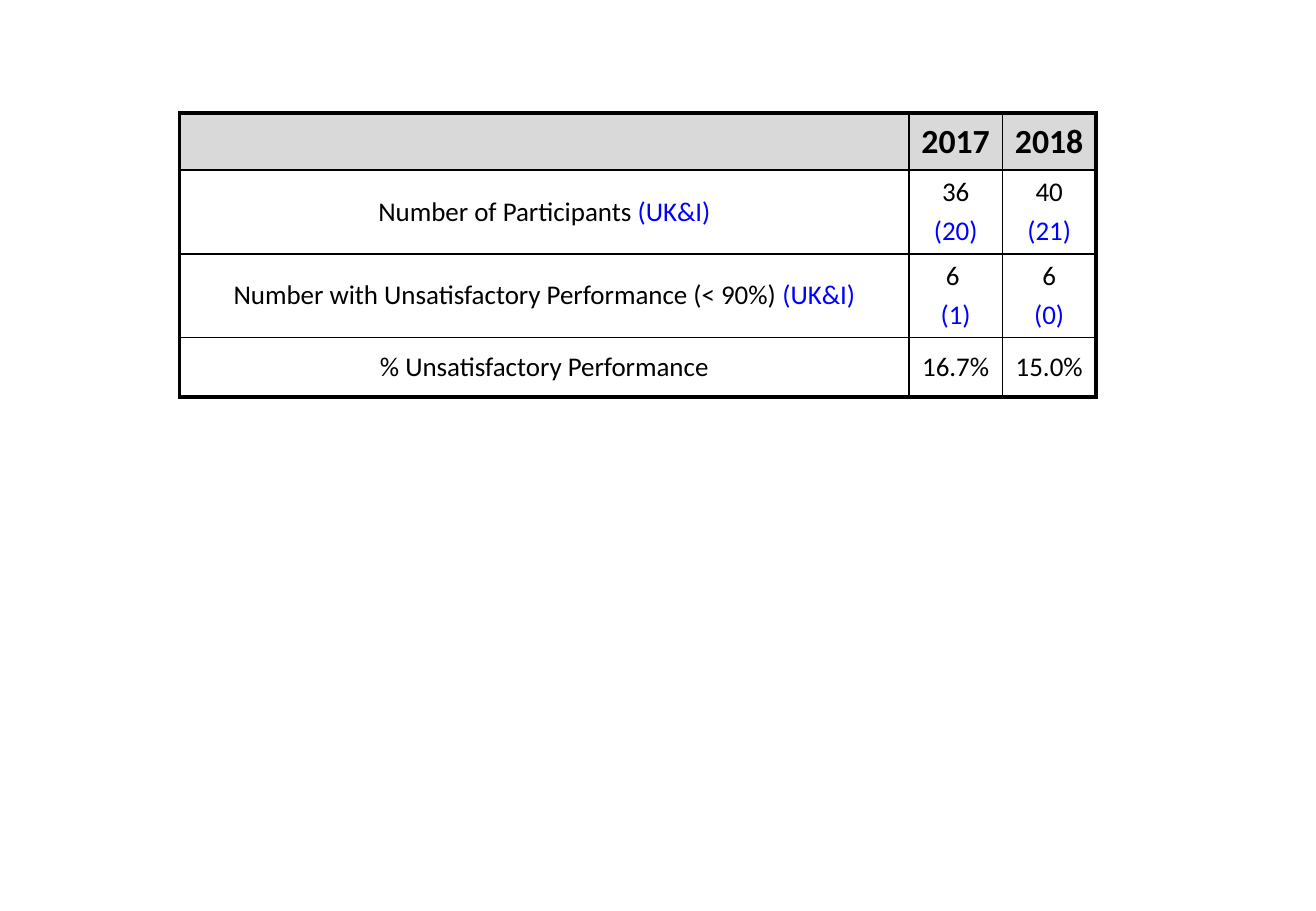
from lxml.etree import SubElement
from pptx import Presentation
from pptx.dml.color import RGBColor
from pptx.enum.text import MSO_ANCHOR, PP_ALIGN
from pptx.oxml.ns import qn
from pptx.util import Inches, Pt

BLACK, BLUE, GREY, WHITE = "000000", "0000FF", "D9D9D9", "FFFFFF"
OUTER_LINE, INNER_LINE = 2.25, 1
COLUMN_WIDTHS = [6, 0.77, 0.77]
ROW_HEIGHTS = [0.47, 0.69, 0.69, 0.49]

# Each cell is a list of paragraphs, each paragraph a list of (text, colour) runs.
ROWS = [
    [[], [[("2017", BLACK)]], [[("2018", BLACK)]]],
    [
        [[("Number of Participants ", BLACK), ("(UK&I)", BLUE)]],
        [[("36", BLACK)], [("(20)", BLUE)]],
        [[("40", BLACK)], [("(21)", BLUE)]],
    ],
    [
        [[("Number with Unsatisfactory Performance (< 90%) ", BLACK), ("(UK&I)", BLUE)]],
        [[("6 ", BLACK)], [("(1)", BLUE)]],
        [[("6", BLACK)], [("(0)", BLUE)]],
    ],
    [
        [[("% Unsatisfactory Performance", BLACK)]],
        [[("16.7%", BLACK)]],
        [[("15.0%", BLACK)]],
    ],
]


def rgb(colour):
    return RGBColor.from_string(colour)


def set_borders(cell, row, column):
    """Draw the table's outer edges thick and its inner edges thin."""
    on_edge = {
        "L": column == 0,
        "R": column == len(COLUMN_WIDTHS) - 1,
        "T": row == 0,
        "B": row == len(ROW_HEIGHTS) - 1,
    }
    properties = cell._tc.get_or_add_tcPr()
    for position, (side, is_outer) in enumerate(on_edge.items()):
        line = SubElement(properties, qn(f"a:ln{side}"))
        line.set("w", str(Pt(OUTER_LINE if is_outer else INNER_LINE)))
        fill = SubElement(line, qn("a:solidFill"))
        SubElement(fill, qn("a:srgbClr")).set("val", BLACK)
        properties.insert(position, line)


def write_cell(cell, paragraphs, is_header):
    cell.vertical_anchor = MSO_ANCHOR.MIDDLE
    cell.margin_left = cell.margin_right = Inches(0.05)
    cell.margin_top = cell.margin_bottom = Inches(0.04)
    cell.fill.solid()
    cell.fill.fore_color.rgb = rgb(GREY if is_header else WHITE)
    for index, runs in enumerate(paragraphs):
        text_frame = cell.text_frame
        paragraph = text_frame.add_paragraph() if index else text_frame.paragraphs[0]
        paragraph.alignment = PP_ALIGN.CENTER
        if index:
            paragraph.space_before = Pt(3.5)
        for text, colour in runs:
            run = paragraph.add_run()
            run.text = text
            run.font.name = "Calibri"
            run.font.size = Pt(20 if is_header else 16)
            run.font.bold = is_header
            run.font.color.rgb = rgb(colour)


def add_performance_table(slide, left, top):
    table = slide.shapes.add_table(
        len(ROW_HEIGHTS), len(COLUMN_WIDTHS), Inches(left), Inches(top),
        Inches(sum(COLUMN_WIDTHS)), Inches(sum(ROW_HEIGHTS)),
    ).table
    table.horz_banding = False
    for column, width in zip(table.columns, COLUMN_WIDTHS):
        column.width = Inches(width)
    for row, height in zip(table.rows, ROW_HEIGHTS):
        row.height = Inches(height)
    for row, contents in enumerate(ROWS):
        for column, paragraphs in enumerate(contents):
            cell = table.cell(row, column)
            write_cell(cell, paragraphs, is_header=row == 0)
            set_borders(cell, row, column)


def main():
    presentation = Presentation()
    presentation.slide_width = Inches(10.83)
    presentation.slide_height = Inches(7.5)
    slide = presentation.slides.add_slide(presentation.slide_layouts[6])
    add_performance_table(slide, 1.48, 0.93)
    presentation.save("out.pptx")


if __name__ == "__main__":
    main()
